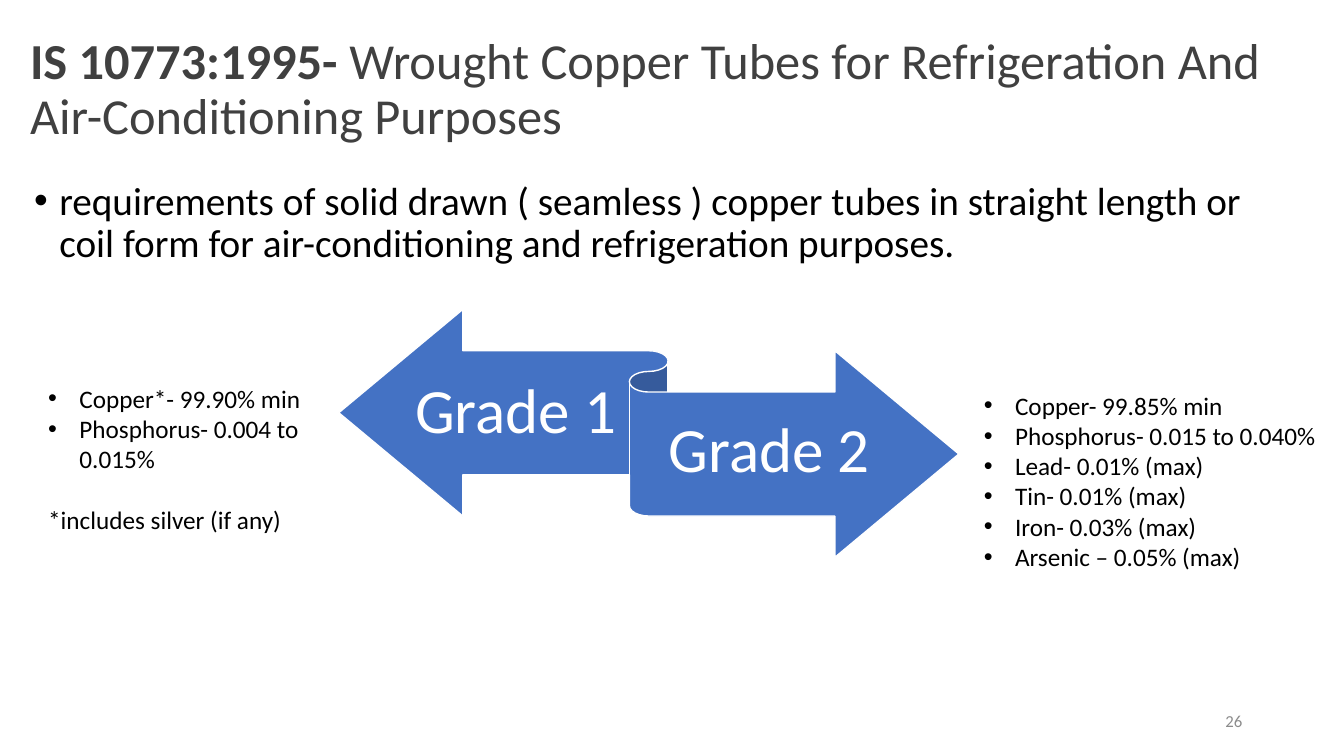
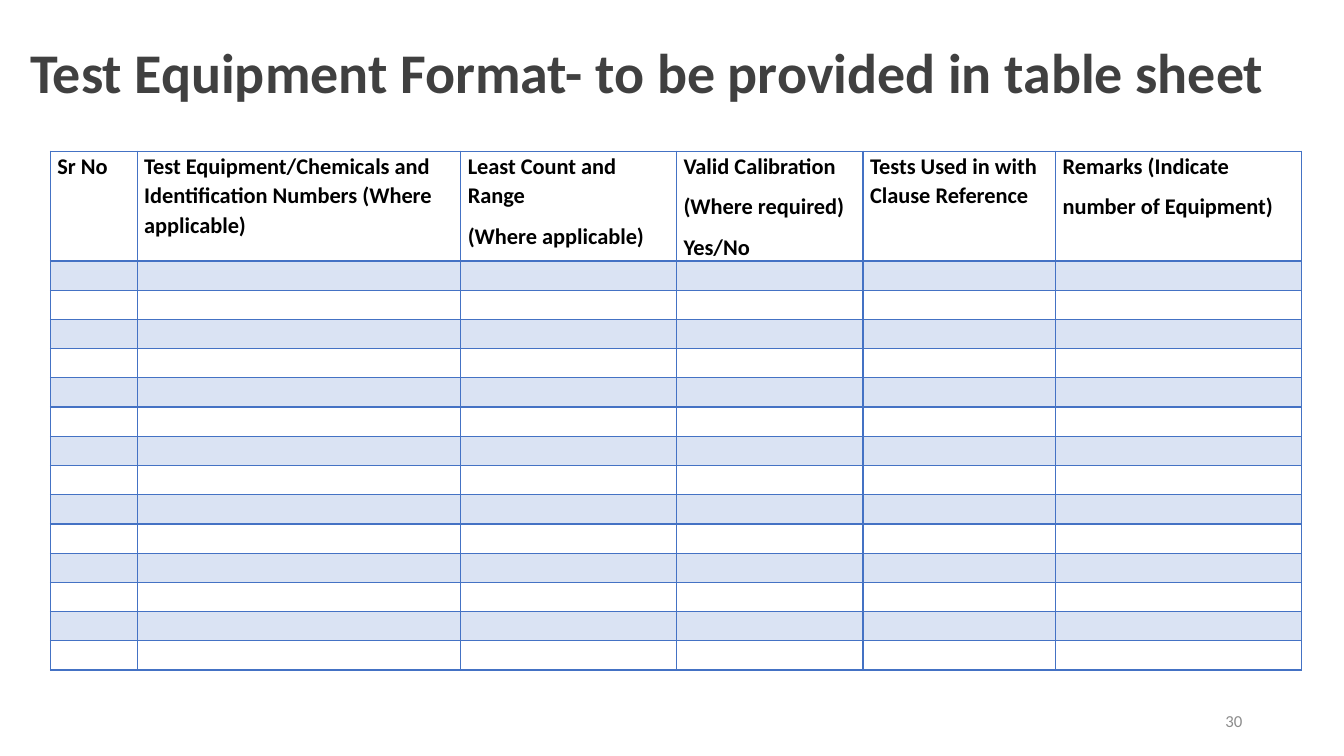
from dataclasses import dataclass

from lxml.etree import SubElement
from pptx import Presentation
from pptx.dml.color import RGBColor as RGB
from pptx.enum.shapes import MSO_SHAPE as Preset
from pptx.enum.text import MSO_ANCHOR as Anchor, PP_ALIGN as Align
from pptx.oxml.ns import qn
from pptx.util import Inches, Pt


@dataclass(frozen=True)
class Theme:
    font: str = "Calibri"
    # Colours
    heading: RGB = RGB(0x40, 0x40, 0x40)
    ink: RGB = RGB(0, 0, 0)
    white: RGB = RGB(0xFF, 0xFF, 0xFF)
    accent: RGB = RGB(0x44, 0x72, 0xC4)
    band: RGB = RGB(0xDA, 0xE3, 0xF3)
    muted: RGB = RGB(0x8C, 0x8C, 0x8C)
    # Type sizes
    long_title: int = 36
    short_title: int = 40
    body: int = 28
    grade: int = 45
    detail: int = 18
    cell: int = 16
    footer: int = 12


class Deck:
    def __init__(self, theme):
        self.theme = theme
        self.prs = Presentation()
        self.prs.slide_width, self.prs.slide_height = Inches(13.33), Inches(7.5)
        self.slide = None

    def add_slide(self, number):
        self.slide = self.prs.slides.add_slide(self.prs.slide_layouts[6])
        # Page number
        frame = self.frame((9.42, 6.95, 3, 0.4), Anchor.MIDDLE)
        page = frame.paragraphs[0]
        page.alignment = Align.RIGHT
        self.run(page, str(number), self.theme.footer, self.theme.muted)

    def frame(self, box, anchor=Anchor.TOP):
        frame = self.slide.shapes.add_textbox(*map(Inches, box)).text_frame
        frame.word_wrap = True
        frame.vertical_anchor = anchor
        return frame

    def run(self, paragraph, text, size, color, bold=False):
        run = paragraph.add_run()
        run.text = text
        run.font.name = self.theme.font
        run.font.size = Pt(size)
        run.font.color.rgb = color
        run.font.bold = bold

    def paragraphs(self, frame, count):
        return [frame.paragraphs[0]] + [frame.add_paragraph() for _ in range(count - 1)]

    def title(self, parts, size, height):
        """Each part is a text and whether it is bold."""
        heading = self.frame((0.2, 0.2, 12.66, height), Anchor.BOTTOM).paragraphs[0]
        heading.line_spacing = 0.9
        for text, bold in parts:
            self.run(heading, text, size, self.theme.heading, bold)

    def bullets(self, box, items, size, indent):
        frame = self.frame(box)
        paragraphs = self.paragraphs(frame, len(items))
        for paragraph, item in zip(paragraphs, items):
            props = paragraph._p.get_or_add_pPr()
            props.set("marL", str(Inches(indent)))
            props.set("indent", str(-Inches(indent)))
            SubElement(props, qn("a:buFont"), typeface="Arial")
            SubElement(props, qn("a:buChar"), char="•")
            self.run(paragraph, item, size, self.theme.ink)
        return frame

    def ribbon(self, box):
        ribbon = self.slide.shapes.add_shape(Preset.LEFT_RIGHT_RIBBON, *map(Inches, box))
        ribbon.shadow.inherit = False
        ribbon.fill.solid()
        ribbon.fill.fore_color.rgb = self.theme.accent
        ribbon.line.color.rgb = self.theme.white
        ribbon.line.width = Pt(1)

    def grade_label(self, box, text):
        frame = self.frame(box, Anchor.MIDDLE)
        frame.margin_left = frame.margin_right = 0
        frame.margin_top, frame.margin_bottom = Inches(0.17), Inches(0.19)
        label = frame.paragraphs[0]
        label.alignment = Align.CENTER
        label.line_spacing = 0.9
        self.run(label, text, self.theme.grade, self.theme.white)

    def cell_borders(self, cell, **widths):
        props = cell._tc.get_or_add_tcPr()
        for side in "LRTB":
            line = SubElement(props, qn(f"a:ln{side}"), w=str(Pt(widths.get(side, 1))))
            fill = SubElement(line, qn("a:solidFill"))
            SubElement(fill, qn("a:srgbClr"), val=str(self.theme.accent))

    def form_table(self, left, top, headers, widths, blank_rows, head_height, row_height):
        height = head_height + blank_rows * row_height
        table = self.slide.shapes.add_table(
            blank_rows + 1, len(headers), Inches(left), Inches(top),
            Inches(sum(widths)), Inches(height)).table
        table.horz_banding = False
        for column, width in zip(table.columns, widths):
            column.width = Inches(width)
        for index, row in enumerate(table.rows):
            row.height = Inches(row_height if index else head_height)
            for cell, lines in zip(row.cells, headers):
                cell.margin_left = cell.margin_right = Inches(0.07)
                cell.margin_top = cell.margin_bottom = 0
                # The header's rule is heavier; both cells on it agree
                self.cell_borders(cell, **{0: {"B": 2}, 1: {"T": 2}}.get(index, {}))
                if index % 2:
                    cell.fill.solid()
                    cell.fill.fore_color.rgb = self.theme.band
                else:
                    cell.fill.background()
                if index == 0:
                    self.header_text(cell.text_frame, lines)
                else:
                    # Keeps an empty cell from growing its row
                    SubElement(cell.text_frame.paragraphs[0]._p, qn("a:endParaRPr"),
                               sz=str(self.theme.cell * 100))

    def header_text(self, frame, lines):
        for paragraph, line in zip(self.paragraphs(frame, len(lines)), lines):
            paragraph.line_spacing = 1.07
            paragraph.space_after = Pt(8)
            self.run(paragraph, line, self.theme.cell, self.theme.ink, bold=True)


def copper_tubes(deck):
    theme = deck.theme
    deck.add_slide(26)
    deck.title([("IS 10773:1995- ", True),
                ("Wrought Copper Tubes for Refrigeration And Air-Conditioning Purposes", False)],
               theme.long_title, 1.29)

    # Scope of the standard
    scope = deck.bullets(
        (0.24, 1.75, 12.62, 1.1),
        ["requirements of solid drawn ( seamless ) copper tubes in straight length or "
         "coil form for air-conditioning and refrigeration purposes."],
        theme.body, 0.25).paragraphs[0]
    scope.line_spacing = 0.9
    scope.space_before = Pt(10)

    # The two grades
    deck.ribbon((3.36, 3.07, 6.15, 2.46))
    deck.grade_label((4.1, 3.5, 2.03, 1.21), "Grade 1")
    deck.grade_label((6.43, 3.89, 2.4, 1.21), "Grade 2")

    # Composition of each grade
    grade_1 = deck.bullets((0.38, 3.75, 2.83, 1.62),
                           ["Copper*- 99.90% min", "Phosphorus- 0.004 to 0.015%"],
                           theme.detail, 0.31)
    footnote = grade_1.add_paragraph()
    footnote.space_before = Pt(22)
    deck.run(footnote, "*includes silver (if any)", theme.detail, theme.ink)
    deck.bullets((9.66, 3.82, 3.67, 2.22),
                 ["Copper- 99.85% min", "Phosphorus- 0.015 to 0.040%", "Lead- 0.01% (max)",
                  "Tin- 0.01% (max)", "Iron- 0.03% (max)", "Arsenic – 0.05% (max)"],
                 theme.detail, 0.31)


def test_equipment(deck):
    deck.add_slide(30)
    deck.title([("Test Equipment Format- to be provided in table sheet", True)],
               deck.theme.short_title, 0.9)

    # Form to be filled in
    headers = [
        ["Sr No"],
        ["Test Equipment/Chemicals and Identification Numbers (Where applicable)"],
        ["Least Count and Range", "(Where applicable)"],
        ["Valid Calibration", "(Where required)", "Yes/No"],
        ["Tests Used in with Clause Reference"],
        ["Remarks (Indicate", "number of Equipment)"],
    ]
    deck.form_table(0.5, 1.5, headers, [0.86, 3.21, 2.14, 1.85, 1.91, 2.44],
                    blank_rows=14, head_height=1.09, row_height=0.29)


def main():
    deck = Deck(Theme())
    copper_tubes(deck)
    test_equipment(deck)
    deck.prs.save("out.pptx")


if __name__ == "__main__":
    main()
